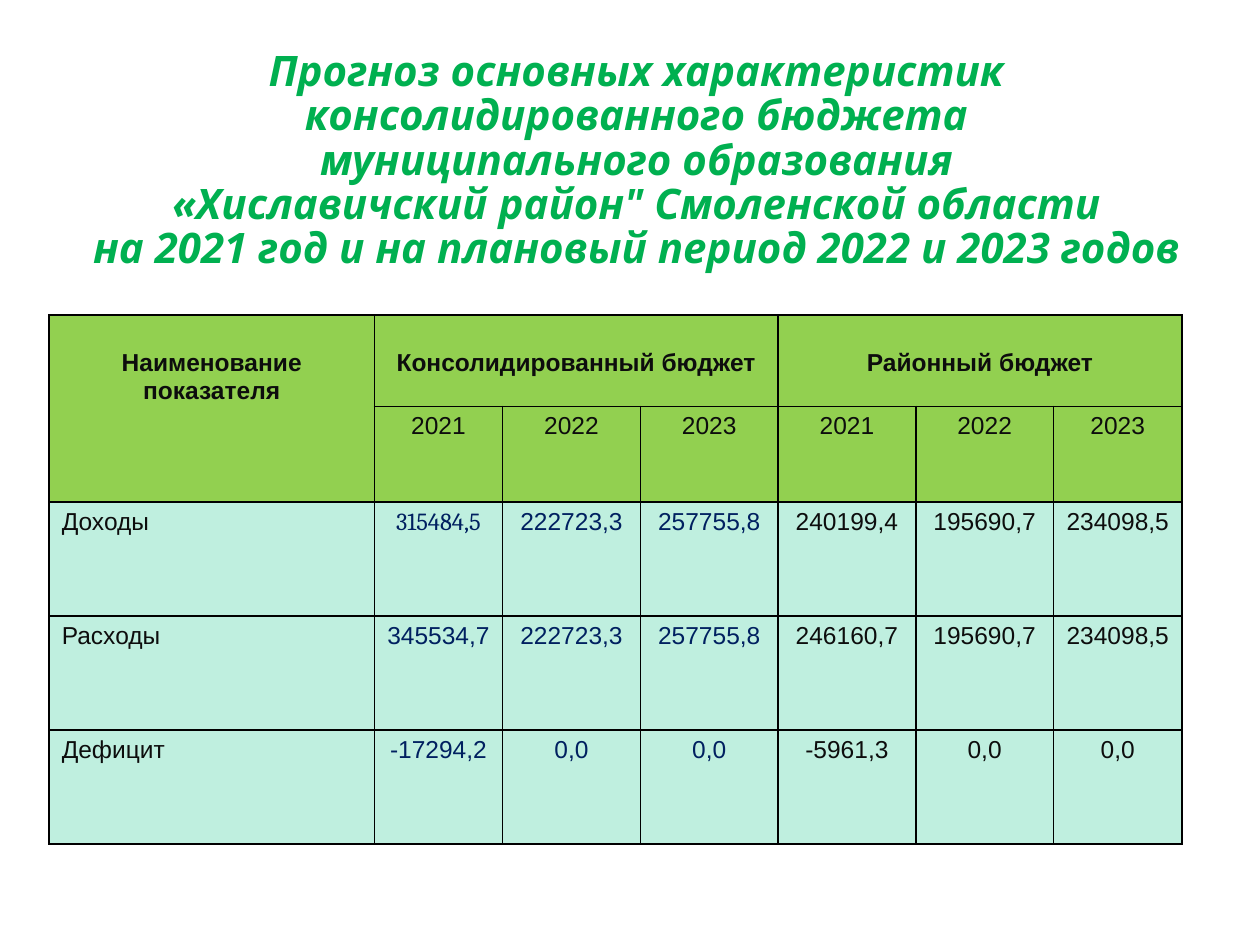
from dataclasses import dataclass
from itertools import product

from lxml.etree import SubElement
from pptx import Presentation
from pptx.dml.color import RGBColor as Rgb
from pptx.enum.text import MSO_ANCHOR as Anchor, MSO_AUTO_SIZE as Fit, PP_ALIGN as Align
from pptx.oxml.ns import qn
from pptx.slide import Slide
from pptx.table import Table, _Cell as Cell
from pptx.util import Pt


@dataclass(frozen=True)
class Theme:
    title: str = "00B050"
    ink: str = "0D0D0D"
    navy: str = "002060"
    head: str = "92D050"
    body: str = "BFEFDF"
    line: str = "000000"
    big: float = 24
    small: float = 14
    font: str = "Arial"
    serif: str = "Cambria"
    sans: str = "Noto Sans"


@dataclass(frozen=True)
class Group:
    name: str
    col: int
    color: str


@dataclass(frozen=True)
class Item:
    name: str
    vals: tuple[str, ...]


THEME = Theme()
TITLE = (
    "Прогноз основных характеристик консолидированного бюджета\v"
    "муниципального образования\v"
    "«Хиславичский район\" Смоленской области\v"
    "на 2021 год и на плановый период 2022 и 2023 годов"
)
YEARS = ("2021", "2022", "2023")
GROUPS = (
    Group("Консолидированный бюджет", 1, THEME.navy),
    Group("Районный бюджет", 4, THEME.ink),
)
ITEMS = (
    Item("Доходы", ("315484,5", "222723,3", "257755,8", "240199,4", "195690,7", "234098,5")),
    Item("Расходы", ("345534,7", "222723,3", "257755,8", "246160,7", "195690,7", "234098,5")),
    Item("Дефицит", ("-17294,2", "0,0", "0,0", "-5961,3", "0,0", "0,0")),
)
COLS = (185.8, 73.4, 78.7, 78.7, 78.7, 78.7, 73.4)
ROWS = (52.2, 54.8, 65.1, 65.1, 65.1)


def add_title(slide: Slide) -> None:
    shape = slide.shapes.title
    shape.left, shape.top, shape.width, shape.height = Pt(39.6), Pt(22.3), Pt(648), Pt(140.4)
    frame = shape.text_frame
    frame.text = TITLE
    frame.word_wrap = True
    frame.auto_size = Fit.NONE
    frame.vertical_anchor = Anchor.MIDDLE
    frame.margin_top = frame.margin_bottom = 0
    para = frame.paragraphs[0]
    para.alignment = Align.CENTER
    para.line_spacing = 0.88
    for run in para.runs:
        font = run.font
        font.name, font.size = THEME.sans, Pt(THEME.big)
        font.bold = font.italic = True
        font.color.rgb = Rgb.from_string(THEME.title)


def style_cell(cell: Cell, fill: str) -> None:
    props = cell._tc.get_or_add_tcPr()
    for side in ("a:lnL", "a:lnR", "a:lnT", "a:lnB"):
        line = SubElement(props, qn(side), w=str(Pt(1)))
        solid = SubElement(line, qn("a:solidFill"))
        SubElement(solid, qn("a:srgbClr"), val=THEME.line)
    cell.fill.solid()
    cell.fill.fore_color.rgb = Rgb.from_string(fill)


def write(cell: Cell, text: str, color: str = THEME.ink, bold: bool = False,
          align: Align = Align.CENTER, face: str = THEME.font) -> None:
    cell.text_frame.text = text
    para = cell.text_frame.paragraphs[0]
    para.alignment = align
    font = para.runs[0].font
    font.name, font.size, font.bold = face, Pt(THEME.small), bold
    font.color.rgb = Rgb.from_string(color)


def fill_head(table: Table) -> None:
    table.cell(0, 0).merge(table.cell(1, 0))
    heads = [(0, "Наименование показателя")]
    for group in GROUPS:
        end = group.col + len(YEARS) - 1
        table.cell(0, group.col).merge(table.cell(0, end))
        heads.append((group.col, group.name))
        for step, year in enumerate(YEARS):
            write(table.cell(1, group.col + step), year)
    for col, name in heads:
        cell = table.cell(0, col)
        write(cell, name, bold=True)
        cell.margin_top = Pt(19.7)


def fill_body(table: Table) -> None:
    for row, item in enumerate(ITEMS, 2):
        write(table.cell(row, 0), item.name, align=Align.LEFT)
        for group, step in product(GROUPS, range(len(YEARS))):
            col = group.col + step
            face = THEME.serif if (row, col) == (2, 1) else THEME.font
            write(table.cell(row, col), item.vals[col - 1], group.color, face=face)


def add_grid(slide: Slide) -> None:
    frame = slide.shapes.add_table(
        len(ROWS), len(COLS), Pt(28.1), Pt(180), Pt(sum(COLS)), Pt(sum(ROWS)))
    table = frame.table
    for col, width in zip(table.columns, COLS):
        col.width = Pt(width)
    for row, height in zip(table.rows, ROWS):
        row.height = Pt(height)
    for row, col in product(range(len(ROWS)), range(len(COLS))):
        style_cell(table.cell(row, col), THEME.head if row < 2 else THEME.body)
    fill_head(table)
    fill_body(table)


def main() -> None:
    deck = Presentation()
    deck.slide_width, deck.slide_height = Pt(720), Pt(540)
    slide = deck.slides.add_slide(deck.slide_layouts[5])
    add_title(slide)
    add_grid(slide)
    deck.save("out.pptx")


if __name__ == "__main__":
    main()
